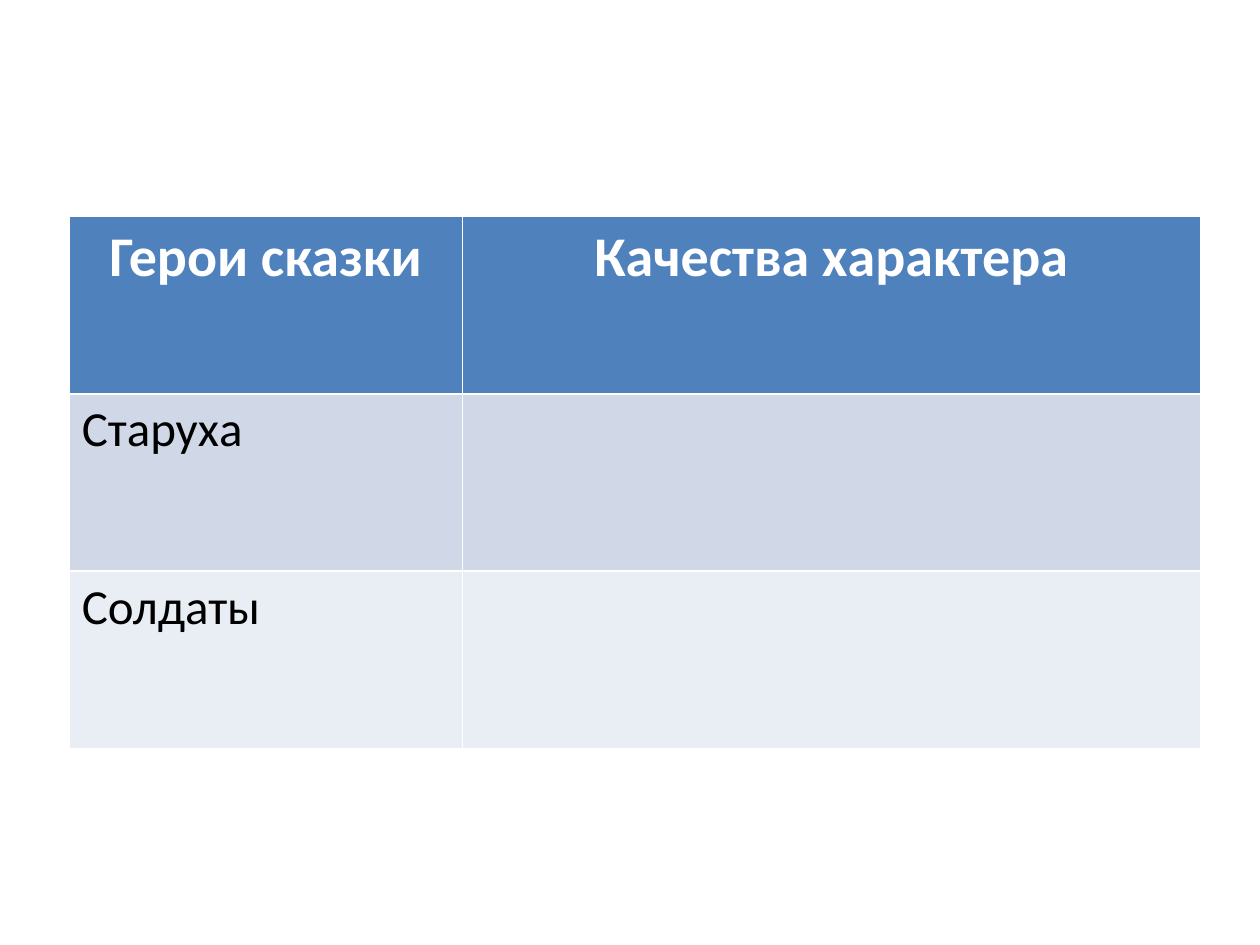
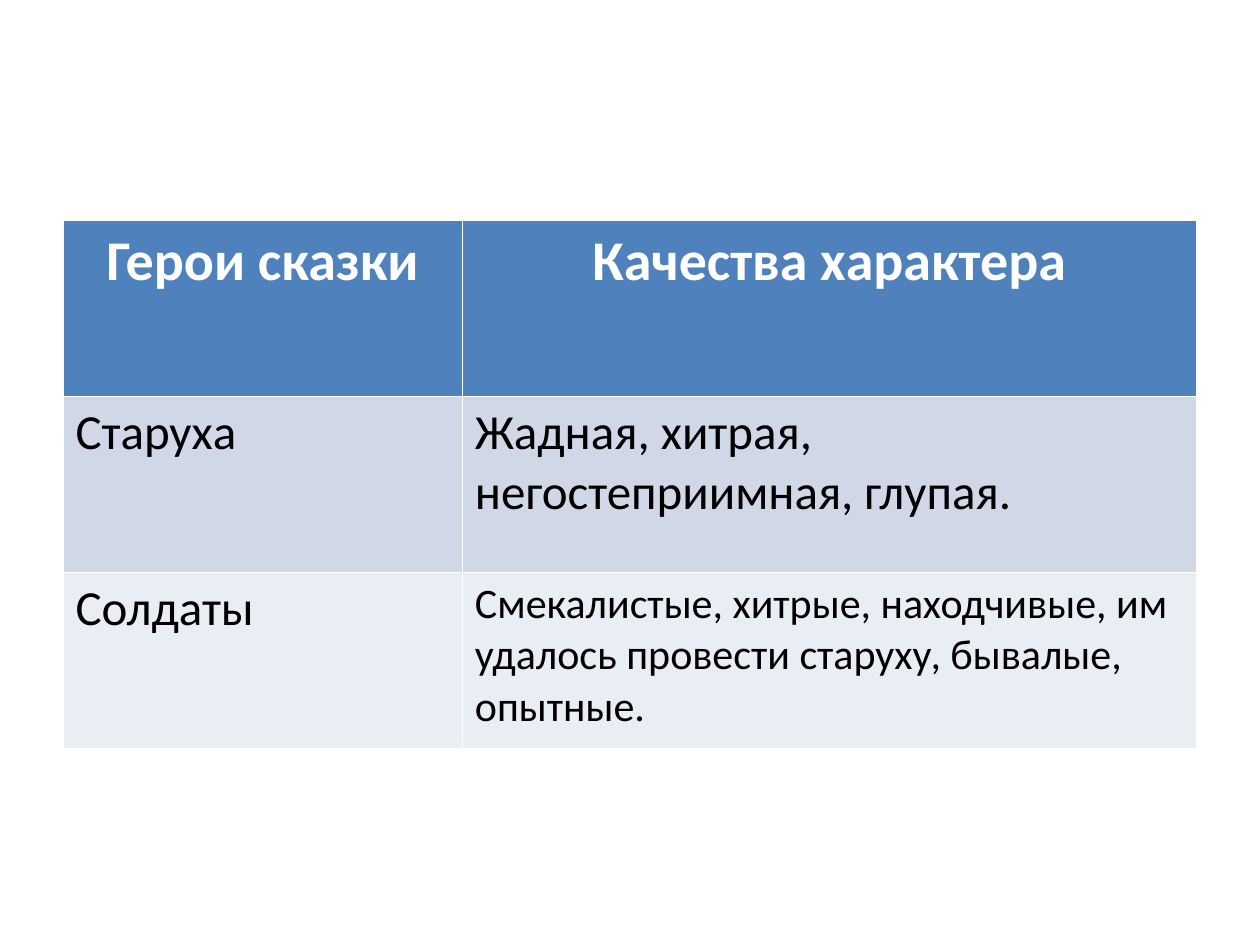
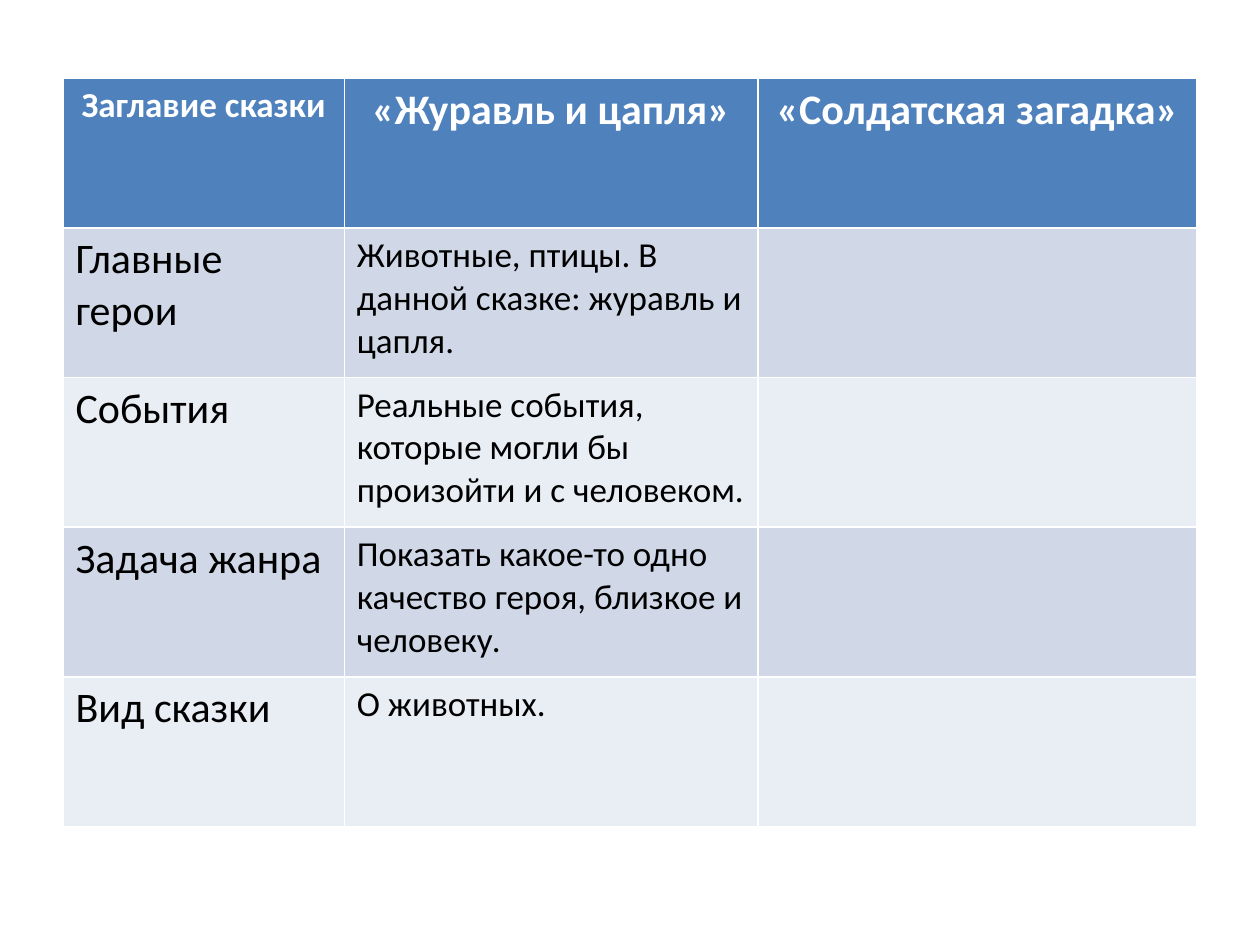
from pptx import Presentation
from pptx import util as u
from pptx.dml.color import RGBColor
from pptx.enum import text

WIDE, HIGH = 10, 7.5
FONT = "Calibri"
INK = {"head": "4F81BD", "odd": "D0D8E8", "even": "E9EDF4",
       "light": "FFFFFF", "dark": "000000"}

TRAITS = ["Герои сказки", "Качества характера"]
TALES = ["Заглавие сказки", "«Журавль и цапля»", "«Солдатская загадка»"]


def tint(name):
    return RGBColor.from_string(INK[name])


def fill_cell(cell, words, size, row):
    head = row == 0
    band = "head" if head else "odd" if row % 2 else "even"
    cell.fill.solid()
    cell.fill.fore_color.rgb = tint(band)
    if not words:
        return
    cell.text = words
    para = cell.text_frame.paragraphs[0]
    para.alignment = text.PP_ALIGN.CENTER if head else text.PP_ALIGN.LEFT
    font = para.font
    font.name, font.size, font.bold = FONT, u.Pt(size), head
    font.color.rgb = tint("light" if head else "dark")


def add_grid(slide, box, cols, rows, size_of):
    left, top, width, height = box
    frame = slide.shapes.add_table(
        len(rows), len(cols), u.Inches(left), u.Inches(top),
        u.Inches(width), u.Inches(height))
    table = frame.table
    for col, part in zip(table.columns, cols):
        col.width = u.Inches(width * part / sum(cols))
    for r, row in enumerate(rows):
        table.rows[r].height = u.Inches(height / len(rows))
        for c, words in enumerate(row):
            fill_cell(table.cell(r, c), words, size_of(r, c), r)


def hero_size(row, col):
    if row == 0:
        return 32
    return 24 if (row, col) == (2, 1) else 28


def tale_size(row, col):
    return 20 if (row == 0) == (col == 0) else 24


def hero_slide(slide, box, cols, crone, troops):
    rows = [TRAITS, ["Старуха", crone], ["Солдаты", troops]]
    add_grid(slide, box, cols, rows, hero_size)


def tale_slide(slide, box):
    rows = [
        TALES,
        ["Главные герои",
         "Животные, птицы. В данной сказке: журавль и цапля.", ""],
        ["События",
         "Реальные события, которые могли бы произойти и с человеком.", ""],
        ["Задача жанра",
         "Показать какое-то одно качество героя, близкое и человеку.", ""],
        ["Вид сказки", "О животных.", ""],
    ]
    sizes = lambda r, c: 24 if r and c == 0 else tale_size(r, c)
    add_grid(slide, box, [2.23, 3.28, 3.48], rows, sizes)


def main():
    deck = Presentation()
    deck.slide_width, deck.slide_height = u.Inches(WIDE), u.Inches(HIGH)
    blank = deck.slide_layouts[6]
    first, second, third = (deck.slides.add_slide(blank) for _ in range(3))
    hero_slide(first, (0.55, 1.72, 8.98, 4.22), [3.12, 5.86], "", "")
    hero_slide(second, (0.5, 1.75, 0.9 * WIDE, 4.19), [3.17, 5.83],
               "Жадная, хитрая, негостеприимная, глупая.",
               "Смекалистые, хитрые, находчивые, им удалось провести "
               "старуху, бывалые, опытные.")
    tale_slide(third, (0.5, 0.62, 0.9 * WIDE, 5.94))
    deck.save("out.pptx")


if __name__ == "__main__":
    main()
